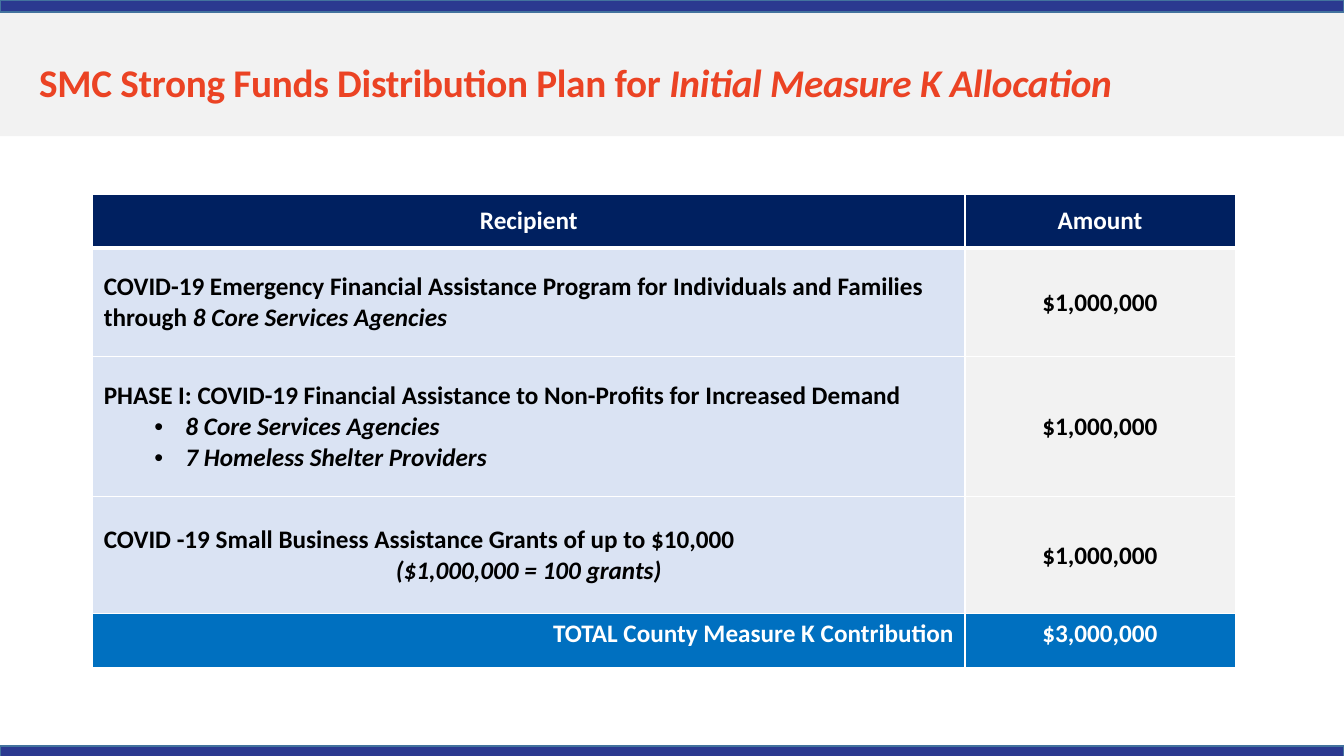
from lxml.etree import SubElement
from pptx import Presentation
from pptx.dml.color import RGBColor
from pptx.enum.shapes import MSO_SHAPE as Shape
from pptx.enum.text import MSO_ANCHOR as Anchor, PP_ALIGN as Align
from pptx.oxml.ns import qn
from pptx.util import Inches, Pt

WIDTH, HEIGHT = 13.33, 7.5
BAR = 0.12
FONT = "Calibri"
WHITE, BLACK, NAVY, BLUE = "FFFFFF", "000000", "002060", "0070C0"
PALE_BLUE, GREY, INDIGO, STEEL, ORANGE = "DAE3F3", "F2F2F2", "2B3990", "43739E", "EB4324"

BANDS = [
    (0, 1.35, GREY, None),
    (HEIGHT - 0.1, BAR, INDIGO, STEEL),
    (0, BAR, INDIGO, STEEL),
]
TITLE = [("SMC Strong Funds Distribution Plan for ", False),
         ("Initial Measure K Allocation", True)]

COLUMNS = [8.65, 2.68]
LEFT, CENTER, RIGHT, BULLET = "left", "center", "right", "bullet"
ROWS = [
    (0.53, [(CENTER, [("Recipient", False)])], "Amount"),
    (1.08, [(LEFT, [("COVID-19 Emergency Financial Assistance Program for Individuals and Families through ", False),
                    ("8 Core Services Agencies", True)])], "$1,000,000"),
    (1.39, [(LEFT, [("PHASE I: COVID-19 Financial Assistance to Non-Profits for Increased Demand", False)]),
            (BULLET, [("8 Core Services Agencies", True)]),
            (BULLET, [("7 Homeless Shelter Providers", True)])], "$1,000,000"),
    (1.16, [(LEFT, [("COVID -19 Small Business Assistance Grants of up to $10,000", False)]),
            (CENTER, [("($1,000,000 = 100 grants)", True)])], "$1,000,000"),
    (0.53, [(RIGHT, [("TOTAL County Measure K Contribution", False)])], "$3,000,000"),
]
ALIGNMENTS = {LEFT: Align.LEFT, CENTER: Align.CENTER, RIGHT: Align.RIGHT, BULLET: Align.LEFT}


def paint(target, color):
    target.solid()
    target.fore_color.rgb = RGBColor.from_string(color)


def add_band(page, top, height, color, outline):
    band = page.shapes.add_shape(Shape.RECTANGLE, 0, Inches(top), Inches(WIDTH), Inches(height))
    band.shadow.inherit = False
    paint(band.fill, color)
    if outline:
        paint(band.line.fill, outline)
        band.line.width = Pt(1)
    else:
        band.line.fill.background()


def write(para, spans, size, color):
    para.font.name = FONT
    para.font.size = Pt(size)
    para.font.bold = True
    para.font.color.rgb = RGBColor.from_string(color)
    for text, italic in spans:
        span = para.add_run()
        span.text = text
        span.font.italic = italic


def add_bullet(para):
    props = para._p.get_or_add_pPr()
    props.set("marL", str(Inches(0.81)))
    props.set("indent", str(Inches(-0.31)))
    SubElement(props, qn("a:buFont"), typeface="Arial")
    SubElement(props, qn("a:buChar"), char="•")
    para.level = 1


def add_borders(cell, widths):
    props = cell._tc.get_or_add_tcPr()
    for side, width in zip("LRTB", widths):
        line = SubElement(props, qn(f"a:ln{side}"), w=str(Pt(width)))
        fill = SubElement(line, qn("a:solidFill"))
        SubElement(fill, qn("a:srgbClr"), val=WHITE)


def fill_cell(cell, paragraphs, background, color, anchor, widths):
    add_borders(cell, widths)
    paint(cell.fill, background)
    cell.vertical_anchor = anchor
    cell.margin_left = cell.margin_right = Inches(0.11)
    cell.margin_top = cell.margin_bottom = Inches(0.05)
    frame = cell.text_frame
    for index, (style, spans) in enumerate(paragraphs):
        para = frame.add_paragraph() if index else frame.paragraphs[0]
        para.alignment = ALIGNMENTS[style]
        if style == BULLET:
            add_bullet(para)
        write(para, spans, 18, color)


def add_title(page):
    box = page.shapes.add_textbox(Inches(0.29), Inches(0.32), Inches(12.57), Inches(1.04))
    frame = box.text_frame
    frame.word_wrap = True
    frame.vertical_anchor = Anchor.MIDDLE
    para = frame.paragraphs[0]
    para.line_spacing = 0.9
    write(para, TITLE, 28, ORANGE)
    for span in para.runs:
        span._r.get_or_add_rPr().set("spc", "-20")


def add_funds_table(page):
    heights = [row[0] for row in ROWS]
    table = page.shapes.add_table(
        len(ROWS), len(COLUMNS), Inches(0.92), Inches(1.93),
        Inches(sum(COLUMNS)), Inches(sum(heights))).table
    table.horz_banding = False
    for column, width in zip(table.columns, COLUMNS):
        column.width = Inches(width)
    last = len(ROWS) - 1
    for index, (height, recipient, amount) in enumerate(ROWS):
        table.rows[index].height = Inches(height)
        backgrounds = {0: (NAVY, NAVY), last: (BLUE, BLUE)}.get(index, (PALE_BLUE, GREY))
        color = WHITE if index in (0, last) else BLACK
        anchor = Anchor.TOP if index == last else Anchor.MIDDLE
        widths = (1, 1, 3 if index == 1 else 1, 3 if index == 0 else 1)
        contents = (recipient, [(CENTER, [(amount, False)])])
        for column, (paragraphs, background) in enumerate(zip(contents, backgrounds)):
            fill_cell(table.cell(index, column), paragraphs, background, color, anchor, widths)


def main():
    deck = Presentation()
    deck.slide_width, deck.slide_height = Inches(WIDTH), Inches(HEIGHT)
    page = deck.slides.add_slide(deck.slide_layouts[6])
    for band in BANDS:
        add_band(page, *band)
    add_title(page)
    add_funds_table(page)
    deck.save("out.pptx")


if __name__ == "__main__":
    main()
